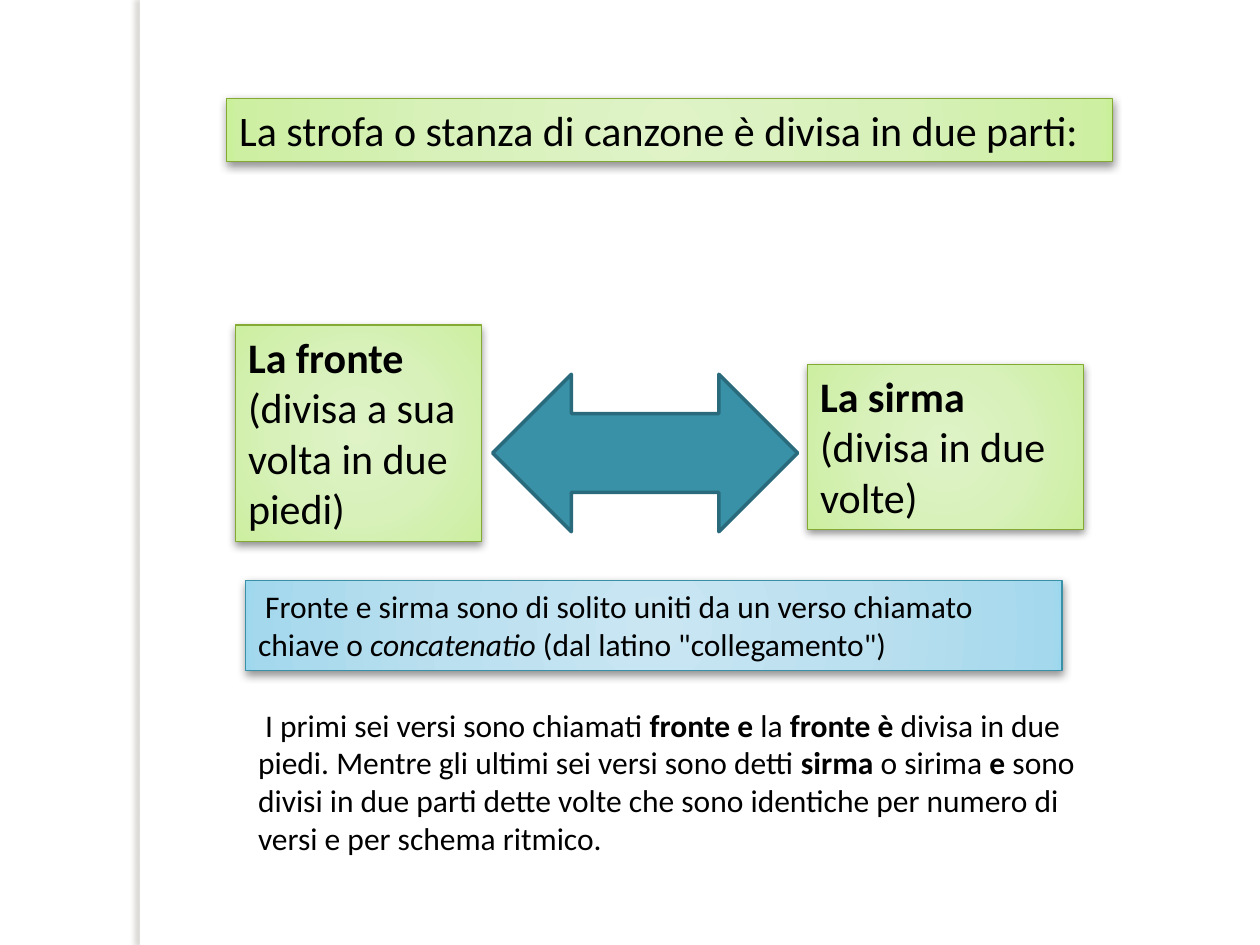
import pptx
import pptx.dml.color
import pptx.enum.shapes
import pptx.enum.text
import pptx.oxml.ns
import pptx.util
import lxml.etree
from dataclasses import dataclass

Inches = pptx.util.Inches
Pt = pptx.util.Pt
SHAPE = pptx.enum.shapes.MSO_SHAPE
qn = pptx.oxml.ns.qn


@dataclass(frozen=True)
class Theme:
    font: str = "Calibri"
    large: int = 24
    body: int = 18
    text: str = "000000"
    panel: str = "FFFFFF"
    teal: str = "3891A7"
    teal_dark: str = "296B7C"
    green: str = "84AA33"
    green_glow: tuple = ((0, "DFF3C7"), (50, "D8F1BA"), (97, "CDEFA2"), (100, "CAF199"))
    blue_glow: tuple = ((0, "C9E6F2"), (50, "BBE0EF"), (97, "A4D8ED"), (100, "9BD7EE"))
    # colour, opacity in percent, blur and distance in points, direction in degrees
    panel_shadow: tuple = ("736F63", 25, 3, 3, 180)
    box_shadow: tuple = ("000000", 43, 5, 2, 90)


def rgb(color):
    return pptx.dml.color.RGBColor.from_string(color)


def add_xml(parent, tag, **attributes):
    values = {name: str(value) for name, value in attributes.items()}
    return lxml.etree.SubElement(parent, qn(tag), values)


class SlideBuilder:
    def __init__(self, slide, theme):
        self.s = slide
        self.theme = theme

    def shape(self, kind, at, fill=None, line=None, width=0.75, shadow=None):
        sp = self.s.shapes.add_shape(kind, *map(Inches, at))
        sp.shadow.inherit = False
        if fill:
            sp.fill.solid()
            sp.fill.fore_color.rgb = rgb(fill)
        if line:
            sp.line.color.rgb = rgb(line)
            sp.line.width = Pt(width)
        else:
            sp.line.fill.background()
        if shadow:
            self.cast_shadow(sp, *shadow)
        return sp

    def cast_shadow(self, sp, color, opacity, blur, distance, angle):
        effects = sp._element.spPr.find(qn("a:effectLst"))
        outer = add_xml(effects, "a:outerShdw", blurRad=Pt(blur), dist=Pt(distance),
                        dir=angle * 60000, rotWithShape=0)
        tone = add_xml(outer, "a:srgbClr", val=color)
        add_xml(tone, "a:alpha", val=opacity * 1000)

    def radial_fill(self, sp, stops):
        sp.fill.gradient()
        grad = sp._element.spPr.find(qn("a:gradFill"))
        for child in list(grad):
            grad.remove(child)
        stop_list = add_xml(grad, "a:gsLst")
        for position, color in stops:
            stop = add_xml(stop_list, "a:gs", pos=position * 1000)
            add_xml(stop, "a:srgbClr", val=color)
        circle = add_xml(grad, "a:path", path="circle")
        add_xml(circle, "a:fillToRect", l=50000, t=50000, r=50000, b=50000)

    def box(self, at, runs, size, glow, line):
        sp = self.shape(SHAPE.RECTANGLE, at, line=line, shadow=self.theme.box_shadow)
        self.radial_fill(sp, glow)
        self.set_runs(sp.text_frame, runs, size)

    def text(self, at, runs, size):
        self.set_runs(self.s.shapes.add_textbox(*map(Inches, at)).text_frame, runs, size)

    def set_runs(self, tf, runs, size):
        """Fill tf with (text, style) runs; style is "", "b" or "i"."""
        tf.word_wrap = True
        tf.auto_size = pptx.enum.text.MSO_AUTO_SIZE.SHAPE_TO_FIT_TEXT
        tf.vertical_anchor = pptx.enum.text.MSO_ANCHOR.TOP
        p = tf.paragraphs[0]
        p.alignment = pptx.enum.text.PP_ALIGN.LEFT
        for text, style in runs:
            r = p.add_run()
            r.text = text
            r.font.name = self.theme.font
            r.font.size = Pt(size)
            r.font.color.rgb = rgb(self.theme.text)
            r.font.bold = style == "b"
            r.font.italic = style == "i"


def main():
    prs = pptx.Presentation()
    prs.slide_width, prs.slide_height = Inches(10), Inches(7.5)
    theme = Theme()
    builder = SlideBuilder(prs.slides.add_slide(prs.slide_layouts[6]), theme)

    builder.shape(SHAPE.RECTANGLE, (1.11, 0, 0.08, 7.5), theme.panel,
                  shadow=theme.panel_shadow)
    builder.shape(SHAPE.LEFT_RIGHT_ARROW, (3.91, 2.97, 2.42, 1.25), theme.teal,
                  theme.teal_dark, 2)

    green_boxes = [
        ((1.8, 0.78, 7.03, 0.5),
         [("La strofa o stanza di canzone è divisa in due parti:", "")]),
        ((1.87, 2.58, 1.95, 1.72),
         [("La fronte ", "b"), ("(divisa a sua volta in due piedi)", "")]),
        ((6.41, 2.89, 2.19, 1.31),
         [("La sirma ", "b"), ("(divisa in due volte)", "")]),
    ]
    for at, runs in green_boxes:
        builder.box(at, runs, theme.large, theme.green_glow, theme.green)

    builder.box((1.95, 4.61, 6.48, 0.71), [
        (" Fronte e sirma sono di solito uniti da un verso chiamato chiave o ", ""),
        ("concatenatio", "i"),
        (" (dal latino \"collegamento\") ", ""),
    ], theme.body, theme.blue_glow, theme.teal)

    builder.text((1.95, 5.55, 6.72, 1.31), [
        (" I primi sei versi sono chiamati ", ""),
        ("fronte e", "b"),
        (" la ", ""),
        ("fronte è", "b"),
        (" divisa in due piedi. Mentre gli ultimi sei versi sono detti ", ""),
        ("sirma", "b"),
        (" o sirima ", ""),
        ("e ", "b"),
        ("sono divisi in due parti dette volte che sono identiche "
         "per numero di versi e per schema ritmico.", ""),
    ], theme.body)

    prs.save("out.pptx")


if __name__ == "__main__":
    main()
